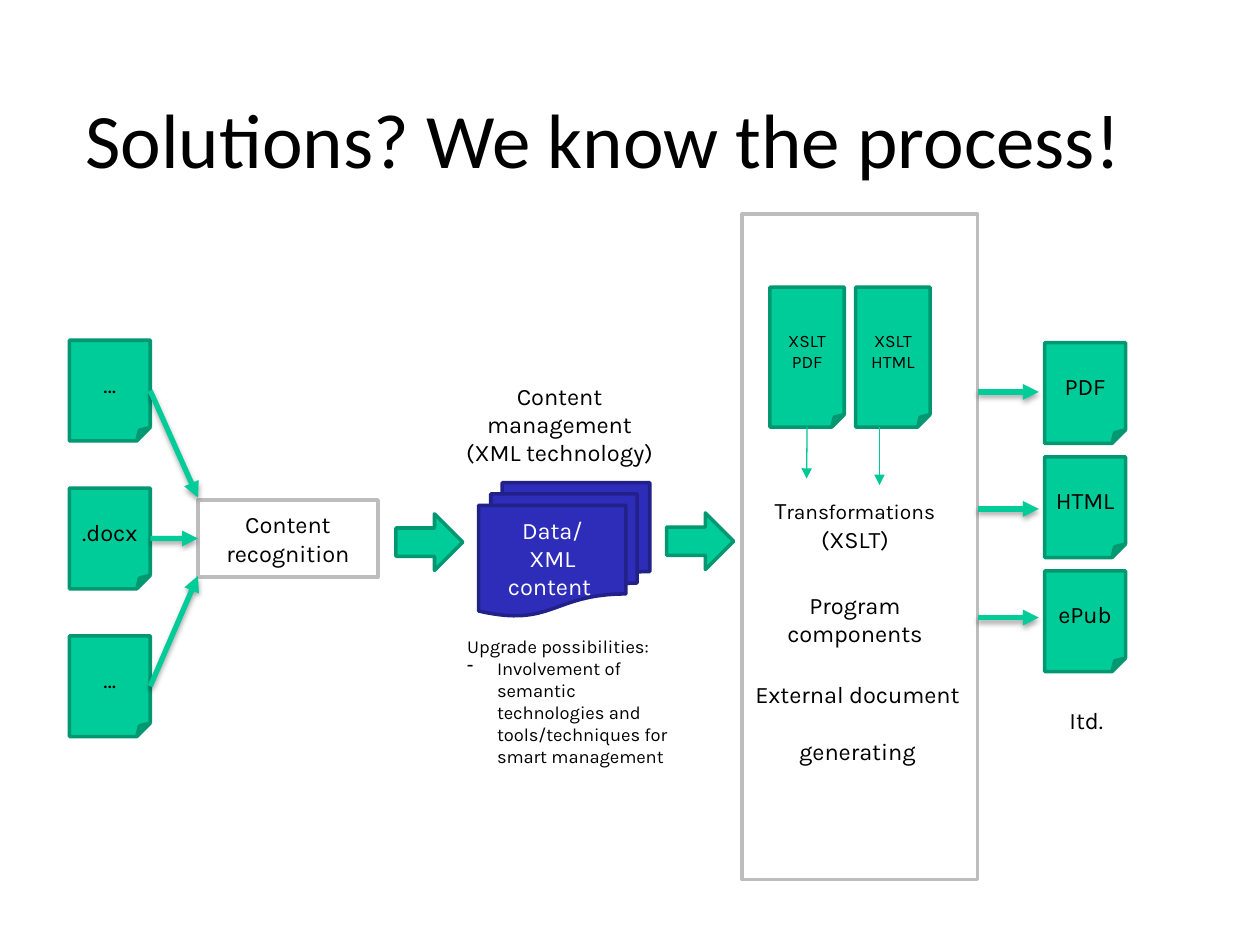
from lxml import etree
from pptx import Presentation
from pptx.dml.color import RGBColor
from pptx.enum.shapes import MSO_CONNECTOR, MSO_SHAPE
from pptx.enum.text import MSO_ANCHOR, PP_ALIGN
from pptx.oxml.ns import qn
from pptx.util import Cm, Pt

PAGE, PROCESS = MSO_SHAPE.FOLDED_CORNER, MSO_SHAPE.FLOWCHART_PROCESS
STACK, ARROW = MSO_SHAPE.FLOWCHART_MULTIDOCUMENT, MSO_SHAPE.RIGHT_ARROW
STRAIGHT = MSO_CONNECTOR.STRAIGHT
LEFT, CENTER = PP_ALIGN.LEFT, PP_ALIGN.CENTER
TOP, MIDDLE = MSO_ANCHOR.TOP, MSO_ANCHOR.MIDDLE
SITE_LEFT, SITE_BOTTOM, SITE_RIGHT = 1, 2, 3

BLACK, WHITE = RGBColor(0, 0, 0), RGBColor(255, 255, 255)
GREEN, DARK_GREEN = RGBColor(0, 0xCC, 0x99), RGBColor(0, 0x97, 0x71)
THIN_GREEN, GREY = RGBColor(0, 0xC8, 0x96), RGBColor(0xBD, 0xBD, 0xBD)
BLUE, DARK_BLUE = RGBColor(0x2D, 0x2D, 0xB9), RGBColor(0x21, 0x21, 0x89)

# Positions in cm
TITLE = "Solutions? We know the process!"
INPUTS = ["…", ".docx", "…"]
INPUT_X, INPUT_Y, INPUT_STEP = 1.4, 6.86, 2.98
OUTPUTS = ["PDF", "HTML", "ePub"]
OUTPUT_X, OUTPUT_Y, OUTPUT_STEP = 21.06, 6.91, 2.3
PAGE_SIZE = (1.63, 2.03)
STYLESHEETS = ["XSLT\vPDF", "XSLT\vHTML"]
SHEET_X, SHEET_Y, SHEET_STEP, SHEET_SIZE = 15.52, 5.79, 1.73, (1.5, 2.82)
PANEL = (14.96, 4.32, 4.75, 13.41)
RECOGNITION = (3.99, 10.08, 3.63, 1.55)
INPUT_ARROW_ENDS = [10.03, None, 11.61]  # None: middle of the box side
BLOCK_ARROWS = [(7.98, 10.36, 1.35, 1.14), (13.44, 10.34, 1.35, 1.14)]
STEPS = [
    (9.8, [("T", 13.5), ("ransformations ", 12), ("(XSLT)", 13.5)]),
    (11.71, [("Program components", 13.5)]),
]
OUTPUT_ARROW_YS = [7.9, 10.26, 12.45]
UPGRADE = [
    "Upgrade possibilities:",
    "Involvement of semantic \vtechnologies and \vtools/techniques for \vsmart management",
]

prs = Presentation()
prs.slide_width, prs.slide_height = Cm(25.4), Cm(19.05)
s = prs.slides.add_slide(prs.slide_layouts[6])


def set_font(p, size, color=BLACK, name="Karla"):
    """Format all runs of p, and size its line breaks to match."""
    for r in p.runs:
        for key, value in {"name": name, "size": Pt(size)}.items():
            setattr(r.font, key, value)
        r.font.color.rgb = color
    for br in p._p.findall(qn("a:br")):
        etree.SubElement(br, qn("a:rPr"), sz=str(int(size * 100)))


def add_box(kind, box, fill, line, text="", size=13.5, color=BLACK):
    sp = s.shapes.add_shape(kind, *map(Cm, box))
    sp.shadow.inherit = False
    sp.fill.solid()
    sp.fill.fore_color.rgb = fill
    sp.line.color.rgb = line
    sp.line.width = Pt(2)
    tf = sp.text_frame
    margins = {"margin_left": 0.18, "margin_right": 0.18,
               "margin_top": 0.1, "margin_bottom": 0.1}
    for key, value in margins.items():
        setattr(tf, key, Cm(value))
    tf.word_wrap, tf.vertical_anchor = True, MIDDLE
    p = tf.paragraphs[0]
    p.alignment = CENTER
    if text:
        p.text = text
        set_font(p, size, color)
    return sp


def add_text(box, lines, size=13.5, align=LEFT, wrap=True, anchor=TOP,
             font="Karla", gap=0):
    tf = s.shapes.add_textbox(*map(Cm, box)).text_frame
    tf.word_wrap, tf.vertical_anchor = wrap, anchor
    for i, line in enumerate(lines):
        p = tf.add_paragraph() if i else tf.paragraphs[0]
        p.text, p.alignment = line, align
        if i and gap:
            p.space_before = Pt(gap)
        set_font(p, size, name=font)
    return tf


def add_arrow(start, end, color=GREEN, width=3, shadow=True):
    c = s.shapes.add_connector(STRAIGHT, *map(Cm, start + end))
    c.line.color.rgb = color
    c.line.width = Pt(width)
    etree.SubElement(c.line._get_or_add_ln(), qn("a:tailEnd"), type="triangle")
    effects = etree.SubElement(c._element.spPr, qn("a:effectLst"))
    if shadow:
        outer = etree.SubElement(effects, qn("a:outerShdw"), blurRad=str(Pt(3.1)),
                                 dist=str(Pt(1.8)), dir="5400000", rotWithShape="0")
        black = etree.SubElement(outer, qn("a:srgbClr"), val="000000")
        etree.SubElement(black, qn("a:alpha"), val="35000")
    return c


def add_pages(labels, x, y, step):
    return [add_box(PAGE, (x, y + i * step, *PAGE_SIZE), GREEN, DARK_GREEN, label)
            for i, label in enumerate(labels)]


add_box(MSO_SHAPE.RECTANGLE, PANEL, WHITE, GREY)
add_text((1.47, 1.32, 22.66, 2.92), [TITLE], 44, anchor=MIDDLE, font="Calibri")

# Inputs and recognition
input_pages = add_pages(INPUTS, INPUT_X, INPUT_Y, INPUT_STEP)
recognition = add_box(PROCESS, RECOGNITION, WHITE, GREY, "Content recognition")
for i, (page, end_y) in enumerate(zip(input_pages, INPUT_ARROW_ENDS)):
    y = INPUT_Y + i * INPUT_STEP + PAGE_SIZE[1] / 2
    c = add_arrow((INPUT_X + PAGE_SIZE[0], y), (RECOGNITION[0], end_y or y))
    c.begin_connect(page, SITE_RIGHT)
    if end_y is None:
        c.end_connect(recognition, SITE_LEFT)

# Content management
add_box(STACK, (9.65, 9.73, 3.45, 2.69), BLUE, DARK_BLUE,
        "Data/\vXML content ", color=WHITE)
for box in BLOCK_ARROWS:
    add_box(ARROW, box, GREEN, DARK_GREEN)
add_text((8.89, 7.57, 4.78, 1.42), ["Content management\v(XML technology)"],
         align=CENTER)
bullet = add_text((9.17, 12.67, 4.95, 3.4), UPGRADE, 10.5).paragraphs[1]
pPr = bullet._p.get_or_add_pPr()
pPr.set("marL", str(Cm(0.6)))
pPr.set("indent", str(-Cm(0.6)))
etree.SubElement(pPr, qn("a:buChar"), char="-")

# Transformations
for y, runs in STEPS:
    p = add_box(PROCESS, (15.42, y, 3.63, 1.55), WHITE, WHITE).text_frame.paragraphs[0]
    for text, _ in runs:
        p.add_run().text = text
    set_font(p, 13.5)
    for r, (_, size) in zip(p.runs, runs):
        r.font.size = Pt(size)
sheets = [add_box(PAGE, (SHEET_X + i * SHEET_STEP, SHEET_Y, *SHEET_SIZE),
                  GREEN, DARK_GREEN, label, 10)
          for i, label in enumerate(STYLESHEETS)]
sheet_bottom = SHEET_Y + SHEET_SIZE[1]
c = add_arrow((16.27, sheet_bottom), (16.26, 9.65), THIN_GREEN, 0.75, False)
c.begin_connect(sheets[0], SITE_BOTTOM)
add_arrow((17.73, sheet_bottom), (17.73, 9.78), THIN_GREEN, 0.75, False)
add_text((14.96, 13.59, 4.65, 1.42), ["External document", "generating"],
         align=CENTER, wrap=False, gap=16)

# Outputs
for y in OUTPUT_ARROW_YS:
    add_arrow((PANEL[0] + PANEL[2], y), (20.94, y))
add_pages(OUTPUTS, OUTPUT_X, OUTPUT_Y, OUTPUT_STEP)
add_text((21.31, 14.1, 1.27, 0.84), ["Itd."], wrap=False)

prs.save("out.pptx")
